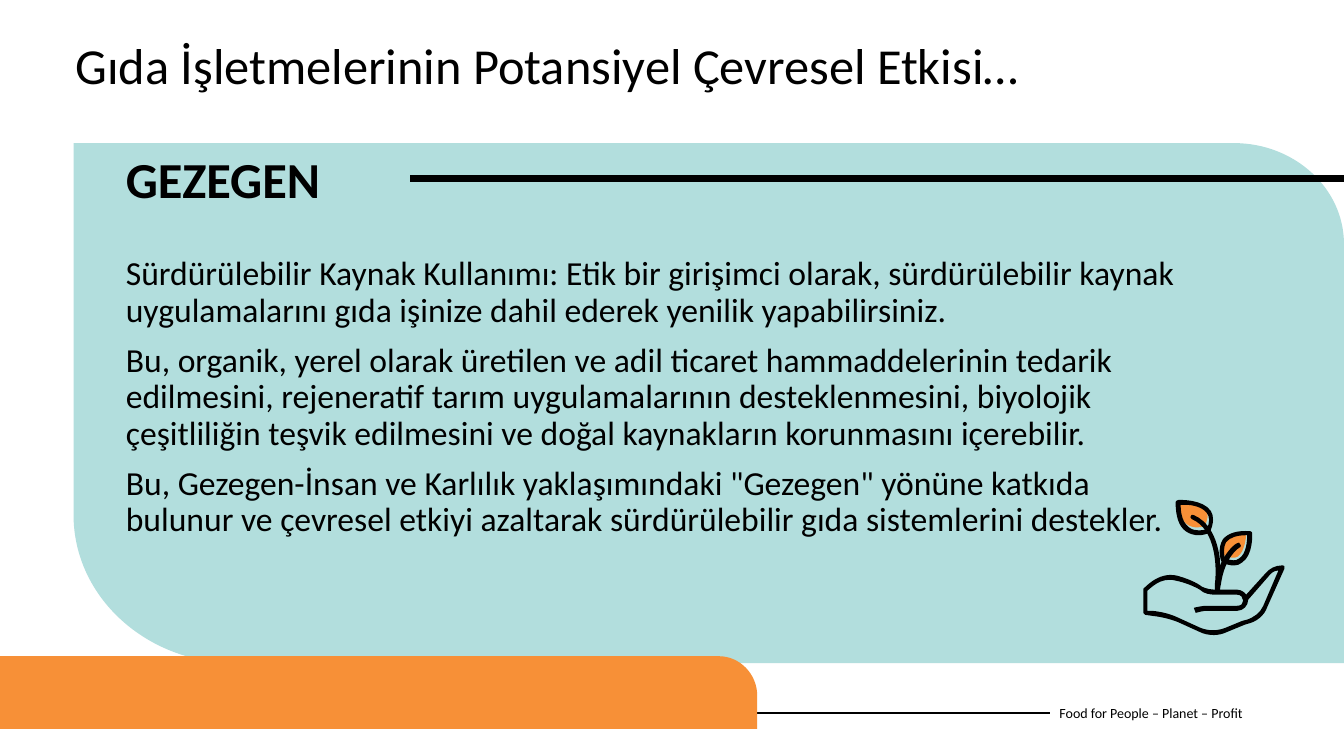
import pptx
import pptx.dml.color
import pptx.enum.shapes
import pptx.enum.text
import pptx.oxml.ns
import pptx.util
import lxml.etree

PX = 9144  # EMU per px, 100 px to the inch
THEME = {
    "font": "Calibri",
    "ink": pptx.dml.color.RGBColor.from_string("000000"),
    "panel": pptx.dml.color.RGBColor.from_string("B2DEDD"),
    "accent": pptx.dml.color.RGBColor.from_string("F79037"),
    "heading": 36,
    "body": 24,
    "footer": 10,
}


def add_text(box, paragraphs, size, bold=False, line_spacing=None, space_before=0,
             anchor=pptx.enum.text.MSO_ANCHOR.TOP):
    text_box = slide.shapes.add_textbox(*(length * PX for length in box))
    frame = text_box.text_frame
    frame.word_wrap = True
    frame.vertical_anchor = anchor
    for index, words in enumerate(paragraphs):
        paragraph = frame.add_paragraph() if index else frame.paragraphs[0]
        paragraph.line_spacing = line_spacing
        paragraph.space_before = pptx.util.Pt(space_before)
        run = paragraph.add_run()
        run.text = words
        run.font.name = THEME["font"]
        run.font.size = pptx.util.Pt(size)
        run.font.bold = bold
        run.font.color.rgb = THEME["ink"]
    return text_box


def add_outline(shapes, colour, *contours):
    """Fill closed contours; a pair is a corner, six numbers are a cubic Bézier curve."""
    builder = shapes.build_freeform(*(value * PX for value in contours[0][0]))
    for index, (start, *steps) in enumerate(contours):
        if index:
            builder.move_to(*(value * PX for value in start))
        builder.add_line_segments([(x * PX, y * PX) for *_, x, y in steps], close=True)
    outline = builder.convert_to_shape()
    left, top = outline.left, outline.top
    segments = list(outline.element.iter(pptx.oxml.ns.qn("a:lnTo")))
    all_steps = [step for contour in contours for step in contour[1:]]
    for segment, step in zip(segments, all_steps):
        if len(step) == 6:
            segment.tag = pptx.oxml.ns.qn("a:cubicBezTo")
            for position, (x, y) in enumerate((step[:2], step[2:4])):
                control = lxml.etree.Element(pptx.oxml.ns.qn("a:pt"))
                control.set("x", str(x * PX - left))
                control.set("y", str(y * PX - top))
                segment.insert(position, control)
    outline.shadow.inherit = False
    outline.fill.solid()
    outline.fill.fore_color.rgb = colour
    outline.line.fill.background()
    return outline


presentation = pptx.Presentation()
presentation.slide_width = 1333 * PX
presentation.slide_height = 750 * PX
slide = presentation.slides.add_slide(presentation.slide_layouts[6])

# Footer
footer = add_text((1041, 687, 273, 40), ["Food for People – Planet – Profit"], THEME["footer"],
                  anchor=pptx.enum.text.MSO_ANCHOR.MIDDLE)
footer_rule = slide.shapes.add_connector(
    pptx.enum.shapes.MSO_CONNECTOR.STRAIGHT, 0, 707 * PX, 1041 * PX, 707 * PX)
footer_rule.end_connect(footer, 1)
footer_rule.line.color.rgb = THEME["ink"]
footer_rule.line.width = pptx.util.Pt(1.5)
lxml.etree.SubElement(footer_rule.element.spPr, pptx.oxml.ns.qn("a:effectLst"))

# Panel, orange band and heading rule
add_outline(slide.shapes, THEME["panel"], [
    (73, 142), (1224, 142), (1284, 142, 1333, 187, 1333, 242), (1333, 658), (234, 658),
    (145, 658, 73, 592, 73, 511)])
add_outline(slide.shapes, THEME["accent"], [
    (0, 651), (713, 651), (734, 651, 751, 669, 751, 690), (751, 723), (0, 723)])
heading_rule = add_outline(slide.shapes, THEME["ink"], [
    (408, 175), (1333, 175), (1333, 179), (408, 179)])
heading_rule.line.color.rgb = THEME["ink"]
heading_rule.line.width = pptx.util.Pt(1.93)
lxml.etree.SubElement(heading_rule.element.spPr.find(pptx.oxml.ns.qn("a:ln")),
                      pptx.oxml.ns.qn("a:miter"), lim="800000")

# Wording
add_text((115, 250, 1089, 376), [
    "Sürdürülebilir Kaynak Kullanımı: Etik bir girişimci olarak, sürdürülebilir kaynak "
    "uygulamalarını gıda işinize dahil ederek yenilik yapabilirsiniz.",
    "Bu, organik, yerel olarak üretilen ve adil ticaret hammaddelerinin tedarik edilmesini, "
    "rejeneratif tarım uygulamalarının desteklenmesini, biyolojik çeşitliliğin teşvik "
    "edilmesini ve doğal kaynakların korunmasını içerebilir.",
    'Bu, Gezegen-İnsan ve Karlılık yaklaşımındaki "Gezegen" yönüne katkıda bulunur ve '
    "çevresel etkiyi azaltarak sürdürülebilir gıda sistemlerini destekler.",
], THEME["body"], line_spacing=0.9, space_before=10)
add_text((65, 36, 1193, 88), ["Gıda İşletmelerinin Potansiyel Çevresel Etkisi…"],
         THEME["heading"], line_spacing=0.9, space_before=10)
add_text((115, 142, 267, 71), ["GEZEGEN"], THEME["heading"], bold=True)

# Hand holding a seedling
right_leaf = [(1214, 551), (1220, 554, 1225, 554, 1228, 552), (1234, 547, 1236, 535, 1236, 528),
              (1226, 528, 1219, 530, 1215, 535), (1211, 541, 1213, 548, 1214, 551)]
left_leaf = [(1170, 498), (1169, 509, 1172, 516, 1177, 520), (1184, 525, 1192, 523, 1195, 522),
             (1198, 515, 1199, 510, 1196, 506), (1191, 499, 1177, 498, 1170, 498)]
hand_outer = [
    (1204, 630), (1199, 630, 1194, 629, 1190, 627), (1168, 617),
    (1160, 614, 1152, 612, 1143, 611), (1136, 610), (1135, 610, 1134, 609, 1134, 608),
    (1134, 586), (1134, 585, 1134, 585, 1134, 584), (1135, 584, 1148, 567, 1167, 571),
    (1178, 574, 1187, 578, 1192, 582), (1196, 584, 1201, 585, 1206, 585), (1227, 585),
    (1231, 585, 1235, 588, 1236, 590), (1255, 569), (1259, 564, 1265, 561, 1271, 561),
    (1272, 561), (1273, 561, 1274, 561, 1274, 562), (1274, 563, 1274, 564, 1274, 564),
    (1257, 602), (1254, 611, 1246, 617, 1237, 619), (1234, 620), (1217, 627),
    (1213, 629, 1208, 630, 1204, 630)]
hand_inner = [
    (1138, 606), (1143, 606), (1152, 607, 1161, 609, 1169, 613), (1191, 623),
    (1199, 626, 1207, 626, 1215, 623), (1232, 616), (1236, 615),
    (1243, 613, 1250, 608, 1253, 601), (1268, 566), (1264, 566, 1261, 568, 1258, 572),
    (1238, 595), (1238, 601, 1233, 606, 1227, 606), (1197, 606),
    (1193, 606, 1190, 607, 1186, 608), (1184, 603), (1188, 602, 1193, 601, 1197, 601),
    (1227, 601), (1231, 601, 1233, 599, 1233, 596), (1233, 593, 1231, 590, 1227, 590),
    (1206, 590), (1200, 590, 1194, 589, 1190, 585), (1185, 582, 1176, 578, 1166, 576),
    (1151, 572, 1141, 584, 1138, 586)]
right_rim_outer = [
    (1224, 561), (1220, 561, 1216, 560, 1212, 558), (1212, 557, 1211, 557, 1211, 556),
    (1211, 556, 1207, 544, 1213, 535), (1218, 529, 1227, 526, 1240, 527),
    (1241, 527, 1242, 528, 1242, 529), (1242, 530, 1243, 551, 1232, 558),
    (1230, 560, 1227, 561, 1224, 561)]
right_rim_inner = [
    (1215, 554), (1221, 556, 1226, 557, 1229, 554), (1236, 550, 1237, 537, 1237, 531),
    (1227, 531, 1220, 533, 1216, 538), (1213, 543, 1214, 551, 1215, 554)]
left_rim_outer = [
    (1189, 531), (1185, 531, 1180, 530, 1176, 527), (1169, 522, 1166, 512, 1166, 498),
    (1166, 497, 1168, 496, 1169, 496), (1170, 496, 1193, 495, 1201, 507),
    (1204, 512, 1204, 519, 1200, 528), (1199, 529, 1199, 529, 1198, 529),
    (1199, 529, 1194, 531, 1189, 531)]
left_rim_inner = [
    (1171, 501), (1171, 512, 1174, 519, 1179, 523), (1185, 528, 1194, 526, 1197, 525),
    (1200, 518, 1200, 513, 1197, 509), (1192, 502, 1179, 500, 1171, 501)]
stem = [
    (1207, 589), (1205, 589, 1204, 588, 1205, 587), (1205, 584, 1205, 582, 1205, 579),
    (1207, 563, 1206, 525, 1182, 515), (1181, 514, 1180, 513, 1181, 512),
    (1181, 511, 1183, 510, 1184, 511), (1198, 517, 1207, 532, 1210, 555),
    (1210, 557, 1210, 559, 1210, 561), (1217, 545, 1226, 539, 1227, 539),
    (1228, 538, 1230, 538, 1230, 540), (1231, 541, 1231, 542, 1230, 543),
    (1229, 543, 1215, 552, 1211, 579), (1210, 583, 1210, 587, 1210, 587),
    (1209, 588, 1208, 589, 1207, 589)]
seedling = slide.shapes.add_group_shape()
for colour, *contours in (
        ("accent", right_leaf), ("accent", left_leaf), ("ink", hand_outer, hand_inner),
        ("ink", right_rim_outer, right_rim_inner), ("ink", left_rim_outer, left_rim_inner),
        ("ink", stem)):
    add_outline(seedling.shapes, THEME[colour], *contours)

presentation.save("out.pptx")
